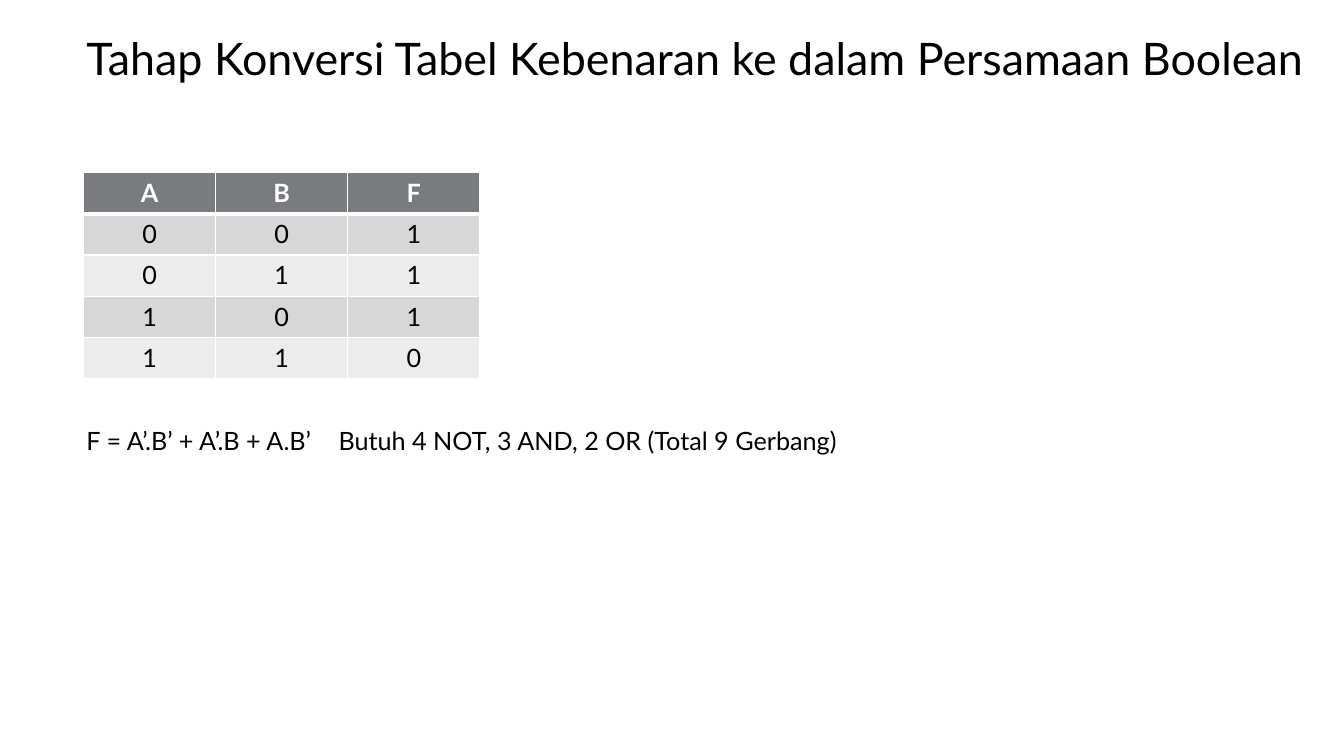
"""Build the slide on turning a truth table into a Boolean equation."""
import lxml.etree
import pptx
import pptx.dml.color
import pptx.enum.text
import pptx.oxml.ns
import pptx.util

Inches = pptx.util.Inches
Pt = pptx.util.Pt
CENTER = pptx.enum.text.PP_ALIGN.CENTER

COLORS = {
    "text": "000000",
    "white": "FFFFFF",
    "header": "797B7E",
    "odd_row": "D7D7D8",
    "even_row": "ECECEC",
}
TRUTH_TABLE = ["ABF", "001", "011", "101", "110"]


def rgb(name):
    return pptx.dml.color.RGBColor.from_string(COLORS[name])


def write_text(frame, text, size=18, color="text", bold=False, align=None):
    paragraph = frame.paragraphs[0]
    paragraph.alignment = align
    run = paragraph.add_run()
    run.text = text
    run.font.name = "Lato"
    run.font.size = Pt(size)
    run.font.bold = bold
    run.font.color.rgb = rgb(color)


def add_line_of_text(slide, text, left, top, width, height, **style):
    frame = slide.shapes.add_textbox(
        Inches(left), Inches(top), Inches(width), Inches(height)).text_frame
    frame.word_wrap = True
    frame.auto_size = pptx.enum.text.MSO_AUTO_SIZE.SHAPE_TO_FIT_TEXT
    write_text(frame, text, **style)


def add_borders(cell, widths):
    qn = pptx.oxml.ns.qn
    properties = cell._tc.get_or_add_tcPr()
    for side, width in widths.items():
        border = lxml.etree.SubElement(
            properties, qn(f"a:ln{side}"), w=str(Pt(width)))
        fill = lxml.etree.SubElement(border, qn("a:solidFill"))
        lxml.etree.SubElement(fill, qn("a:srgbClr"), val=COLORS["white"])


def add_truth_table(slide, rows, left, top, column_width, row_height):
    column_count = len(rows[0])
    table = slide.shapes.add_table(
        len(rows), column_count, Inches(left), Inches(top),
        Inches(column_width * column_count),
        Inches(row_height * len(rows))).table
    for column in table.columns:
        column.width = Inches(column_width)
    for r, values in enumerate(rows):
        table.rows[r].height = Inches(row_height)
        is_header = r == 0
        row_fill = "header" if is_header else "odd_row" if r % 2 else "even_row"
        for c, value in enumerate(values):
            cell = table.cell(r, c)
            add_borders(cell, {"L": 1, "R": 1, "T": 3 if r == 1 else 1,
                               "B": 3 if is_header else 1})
            cell.fill.solid()
            cell.fill.fore_color.rgb = rgb(row_fill)
            write_text(cell.text_frame, value, bold=is_header, align=CENTER,
                       color="white" if is_header else "text")


def main():
    deck = pptx.Presentation()
    deck.slide_width = Inches(13.33)
    deck.slide_height = Inches(7.5)
    slide = deck.slides.add_slide(deck.slide_layouts[6])
    add_line_of_text(
        slide, "Tahap Konversi Tabel Kebenaran ke dalam Persamaan Boolean",
        0.76, 0.26, 12.3, 0.64, size=32)
    add_truth_table(slide, TRUTH_TABLE, 0.83, 1.71, 1.31, 0.41)
    add_line_of_text(
        slide,
        "F = A’.B’ + A’.B + A.B’\tButuh 4 NOT, 3 AND, 2 OR (Total 9 Gerbang)",
        0.76, 4.17, 11.56, 0.4)
    deck.save("out.pptx")


if __name__ == "__main__":
    main()
